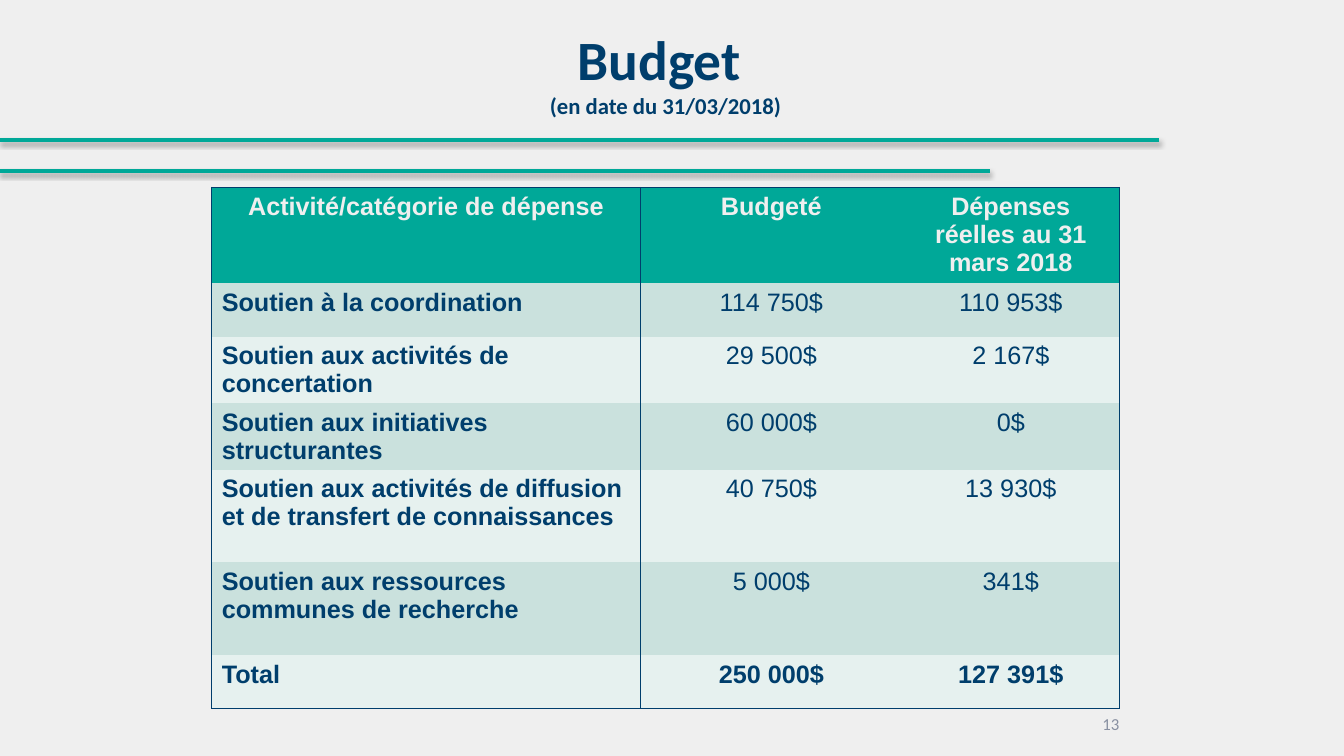
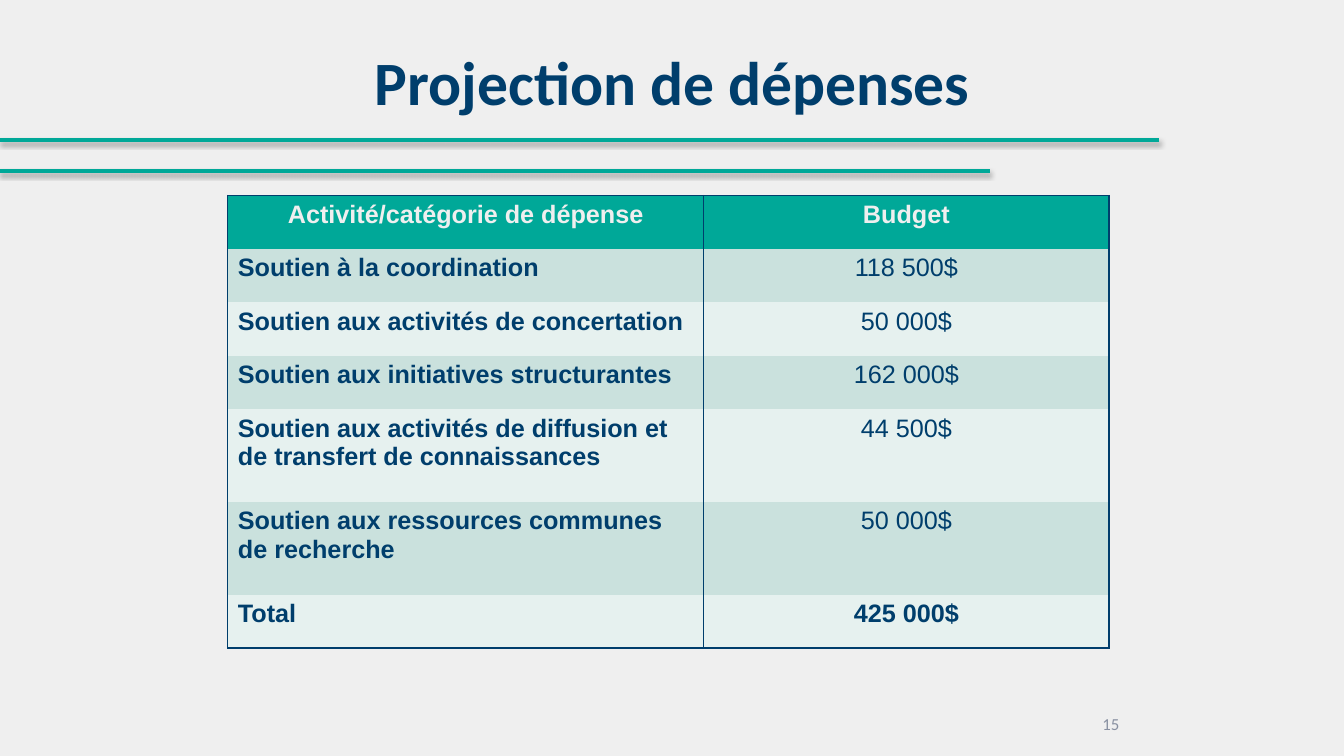
from lxml.etree import SubElement as Sub
from pptx import Presentation
from pptx.dml.color import RGBColor as Rgb
from pptx.enum.shapes import MSO_CONNECTOR as Link
from pptx.enum.text import MSO_ANCHOR as Anchor, PP_ALIGN as Align
from pptx.oxml import parse_xml
from pptx.oxml.ns import nsdecls, qn
from pptx.util import Pt

PX = 9144
COLORS = {
    "page": "EFEFEF",
    "navy": "003E6C",
    "teal": "00A898",
    "dark": "CAE1DD",
    "light": "E6F1EF",
    "gray": "8890A1",
}
SHADOW = (
    f'<a:effectLst {nsdecls("a")}>'
    '<a:outerShdw blurRad="40000" dist="23000" dir="5400000" rotWithShape="0">'
    '<a:srgbClr val="000000"><a:alpha val="35000"/></a:srgbClr>'
    "</a:outerShdw></a:effectLst>"
)


def px(*nums):
    return [num * PX for num in nums]


def color(name):
    return Rgb.from_string(COLORS[name])


def write(frame, *lines, sizes=(18,), font="Arial", tint="navy", bold=False, align=Align.CENTER):
    frame.word_wrap = True
    para = frame.paragraphs[0]
    para.alignment = align
    for num, (line, size) in enumerate(zip(lines, sizes)):
        if num:
            para.add_line_break()
        run = para.add_run()
        run.text = line
        run.font.name = font
        run.font.size = Pt(size)
        run.font.bold = bold
        run.font.color.rgb = color(tint)


def add_text(slide, box, *lines, **style):
    frame = slide.shapes.add_textbox(*px(*box)).text_frame
    frame.vertical_anchor = Anchor.MIDDLE
    write(frame, *lines, font="Calibri", **style)


def add_rule(slide, top, end):
    rule = slide.shapes.add_connector(Link.STRAIGHT, *px(0, top, end, top))
    rule.line.color.rgb = color("teal")
    rule.line.width = Pt(3)
    rule.element.spPr.append(parse_xml(SHADOW))


def set_edges(cell, edges):
    props = cell._tc.get_or_add_tcPr()
    for side, shown in edges.items():
        line = Sub(props, qn(f"a:ln{side}"), w=str(Pt(1)))
        if shown:
            fill = Sub(line, qn("a:solidFill"))
            Sub(fill, qn("a:srgbClr"), val=COLORS["navy"])
        else:
            Sub(line, qn("a:noFill"))


def add_table(slide, left, top, cols, rows, data):
    box = px(left, top, sum(cols), sum(rows))
    table = slide.shapes.add_table(len(rows), len(cols), *box).table
    for col, width in zip(table.columns, cols):
        col.width = width * PX
    for row, height in zip(table.rows, rows):
        row.height = height * PX
    last_row, last_col = len(rows) - 1, len(cols) - 1
    for r, row in enumerate(data):
        for c, text in enumerate(row):
            cell = table.cell(r, c)
            cell.margin_bottom = 0
            set_edges(cell, {
                "L": c < 2,
                "R": c in (0, last_col),
                "T": r == 0,
                "B": r == last_row,
            })
            cell.fill.solid()
            cell.fill.fore_color.rgb = color("teal" if r == 0 else "dark" if r % 2 else "light")
            write(
                cell.text_frame, text,
                tint="navy" if r else "page",
                bold=c == 0 or r in (0, last_row),
                align=Align.LEFT if r and c == 0 else Align.CENTER,
            )


def add_slide(deck, number, box, *title, sizes):
    slide = deck.slides.add_slide(deck.slide_layouts[6])
    add_rule(slide, 139, 1150)
    add_rule(slide, 170, 982)
    add_text(slide, box, *title, sizes=sizes, bold=True)
    add_text(slide, (887, 698, 233, 40), number, sizes=(12,), tint="gray", align=Align.RIGHT)
    return slide


def main():
    deck = Presentation()
    deck.slide_width, deck.slide_height = px(1333, 750)
    back = deck.slide_master.background.fill
    back.solid()
    back.fore_color.rgb = color("page")

    slide = add_slide(
        deck, "13", (210, 21, 900, 101),
        "Budget ", "(en date du 31/03/2018)", sizes=(39.6, 16.2),
    )
    add_table(slide, 210, 186, [425, 260, 215], [93, 53, 66, 66, 92, 92, 53], [
        ["Activité/catégorie de dépense", "Budgeté", "Dépenses réelles au 31 mars 2018"],
        ["Soutien à la coordination", "114 750$", "110 953$"],
        ["Soutien aux activités de concertation", "29 500$", "2 167$"],
        ["Soutien aux initiatives structurantes", "60 000$", "0$"],
        ["Soutien aux activités de diffusion et de transfert de connaissances", "40 750$", "13 930$"],
        ["Soutien aux ressources communes de recherche", "5 000$", "341$"],
        ["Total", "250 000$", "127 391$"],
    ])

    slide = add_slide(deck, "15", (217, 30, 900, 101), "Projection de dépenses", sizes=(44,))
    add_table(slide, 226, 194, [472, 402], [53, 53, 53, 53, 92, 92, 53], [
        ["Activité/catégorie de dépense", "Budget"],
        ["Soutien à la coordination", "118 500$"],
        ["Soutien aux activités de concertation", "50 000$"],
        ["Soutien aux initiatives structurantes", "162 000$"],
        ["Soutien aux activités de diffusion et de transfert de connaissances", "44 500$"],
        ["Soutien aux ressources communes de recherche", "50 000$"],
        ["Total", "425 000$"],
    ])
    deck.save("out.pptx")


if __name__ == "__main__":
    main()
